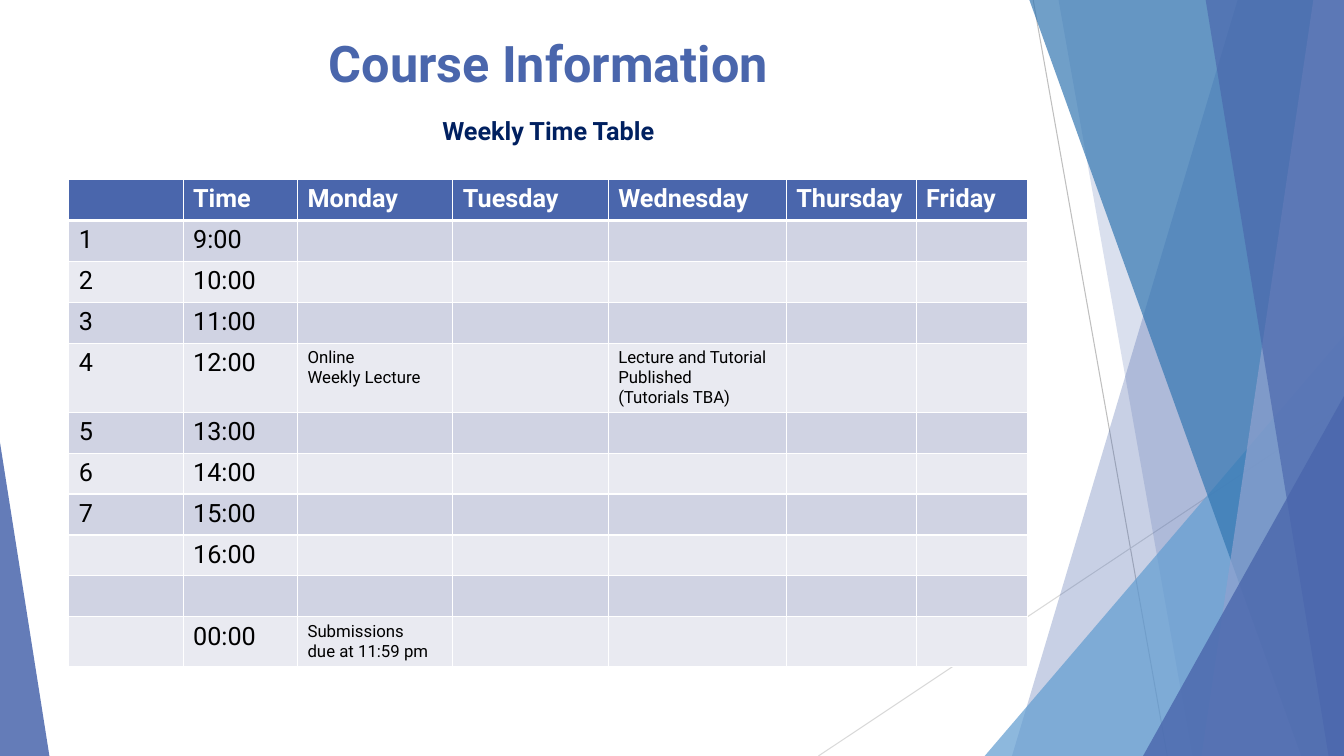
"""Build the Course Information slide with its weekly time table."""
from lxml import etree
from pptx import Presentation
from pptx import util as u
from pptx.dml.color import RGBColor
from pptx.enum import shapes, text
from pptx.oxml.ns import qn

Pt = u.Pt
WIDTH, HEIGHT = 960, 540
BLUE, WHITE = "4A66AC", "FFFFFF"


def paint(fill, colour, opacity=100):
    fill.solid()
    fill.fore_color.rgb = RGBColor.from_string(colour)
    if opacity < 100:
        colour_tag = next(fill._xPr.iter(qn("a:srgbClr")))
        etree.SubElement(colour_tag, qn("a:alpha"), val=str(opacity * 1000))


def style(frame, size, colour, bold, align=text.PP_ALIGN.LEFT):
    for paragraph in frame.paragraphs:
        paragraph.alignment = align
        for run in paragraph.runs:
            run.font.name, run.font.size, run.font.bold = "Roboto", Pt(size), bold
            paint(run.font.fill, colour)


prs = Presentation()
prs.slide_width, prs.slide_height = Pt(WIDTH), Pt(HEIGHT)
slide = prs.slides.add_slide(prs.slide_layouts[5])

for start, end, colour in [
    ((738, 0), (833.8, HEIGHT), "BFBFBF"),
    ((WIDTH, 290), (584.6, HEIGHT), "D9D9D9"),
]:
    ray = slide.shapes.add_connector(
        shapes.MSO_CONNECTOR.STRAIGHT, *map(Pt, start + end))
    paint(ray.line.fill, colour)
    ray.line.width = Pt(0.75)
    etree.SubElement(ray._element.spPr, qn("a:effectLst"))

# Bands give their top and bottom left x; triangles give left, top and width.
facets = [
    ((884.2, 722.9), BLUE, 30),
    ((756, 851.8), BLUE, 20),
    ((703.4, 239.8, 256.6), "629DD1", 72),
    ((735.1, 929.5), "3477B2", 70),
    ((938.2, 858.2), "90A2CF", 70),
    ((861.1, 949), BLUE, 65),
    ((816.5, 283, 143.5), BLUE, 80),
    ((0, 316.1, 35.3), BLUE, 85),
]
for place, colour, opacity in facets:
    if len(place) == 2:
        top_x, bottom_x = place
        outline = slide.shapes.build_freeform(Pt(top_x), Pt(-0.6))
        outline.add_line_segments([
            (Pt(WIDTH), Pt(-0.6)), (Pt(WIDTH), Pt(HEIGHT)), (Pt(bottom_x), Pt(HEIGHT))])
        facet = outline.convert_to_shape()
    else:
        left, top, width = place
        facet = slide.shapes.add_shape(
            shapes.MSO_SHAPE.ISOSCELES_TRIANGLE,
            Pt(left), Pt(top), Pt(width), Pt(HEIGHT - top))
        facet.adjustments[0] = 1 if left else 0
    paint(facet.fill, colour, opacity)
    facet.line.fill.background()
    facet.shadow.inherit = False

title = slide.shapes.title
title.left, title.top, title.width, title.height = map(Pt, (53.3, 16.6, 676.8, 61.9))
heading = title.text_frame
heading.text = "Course Information"
heading.auto_size = text.MSO_AUTO_SIZE.NONE
heading.vertical_anchor = text.MSO_ANCHOR.TOP
heading.margin_top = Pt(6)
style(heading, 36, BLUE, True, text.PP_ALIGN.CENTER)

days = ["Monday", "Tuesday", "Wednesday", "Thursday", "Friday"]
hours = ["9:00", "10:00", "11:00", "12:00", "13:00", "14:00", "15:00", "16:00", "", "00:00"]
events = {
    (4, 2): "Online\nWeekly Lecture",
    (4, 4): "Lecture and Tutorial Published\n(Tutorials TBA)",
    (10, 2): "Submissions\ndue at 11:59 pm",
}
column_widths = [81.7, 81.7, 111, 111, 127.2, 92.8, 79.8]
row_heights = {4: 48.8, 10: 35}

timetable = slide.shapes.add_table(
    len(hours) + 1, len(column_widths), Pt(49.1), Pt(128.3), Pt(685.2), Pt(349)).table
for column, width in zip(timetable.columns, column_widths):
    column.width = Pt(width)
for r, row in enumerate(timetable.rows):
    row.height = Pt(row_heights.get(r, 29.2))
    if r == 0:
        labels = ["", "Time"] + days
    else:
        labels = [str(r) if r <= 7 else "", hours[r - 1]] + [
            events.get((r, c), "") for c in range(2, 7)]
    for c, (cell, label) in enumerate(zip(row.cells, labels)):
        cell.text_frame.text = label
        style(cell.text_frame, 12 if (r, c) in events else 18,
              "000000" if r else WHITE, r == 0)
        paint(cell.fill, BLUE if r == 0 else "D0D3E3" if r % 2 else "E9EAF1")
        for i, side in enumerate("LRTB"):
            thick = (r, side) in [(0, "B"), (1, "T")]
            border = etree.Element(qn(f"a:ln{side}"), w=str(Pt(3 if thick else 1)))
            solid = etree.SubElement(border, qn("a:solidFill"))
            etree.SubElement(solid, qn("a:srgbClr"), val=WHITE)
            cell._tc.get_or_add_tcPr().insert(i, border)

subtitle = slide.shapes.add_textbox(Pt(231.1), Pt(78.5), Pt(321.1), Pt(28.8)).text_frame
subtitle.word_wrap = True
subtitle.text = "Weekly Time Table"
style(subtitle, 18, "002060", True, text.PP_ALIGN.CENTER)

prs.save("out.pptx")
